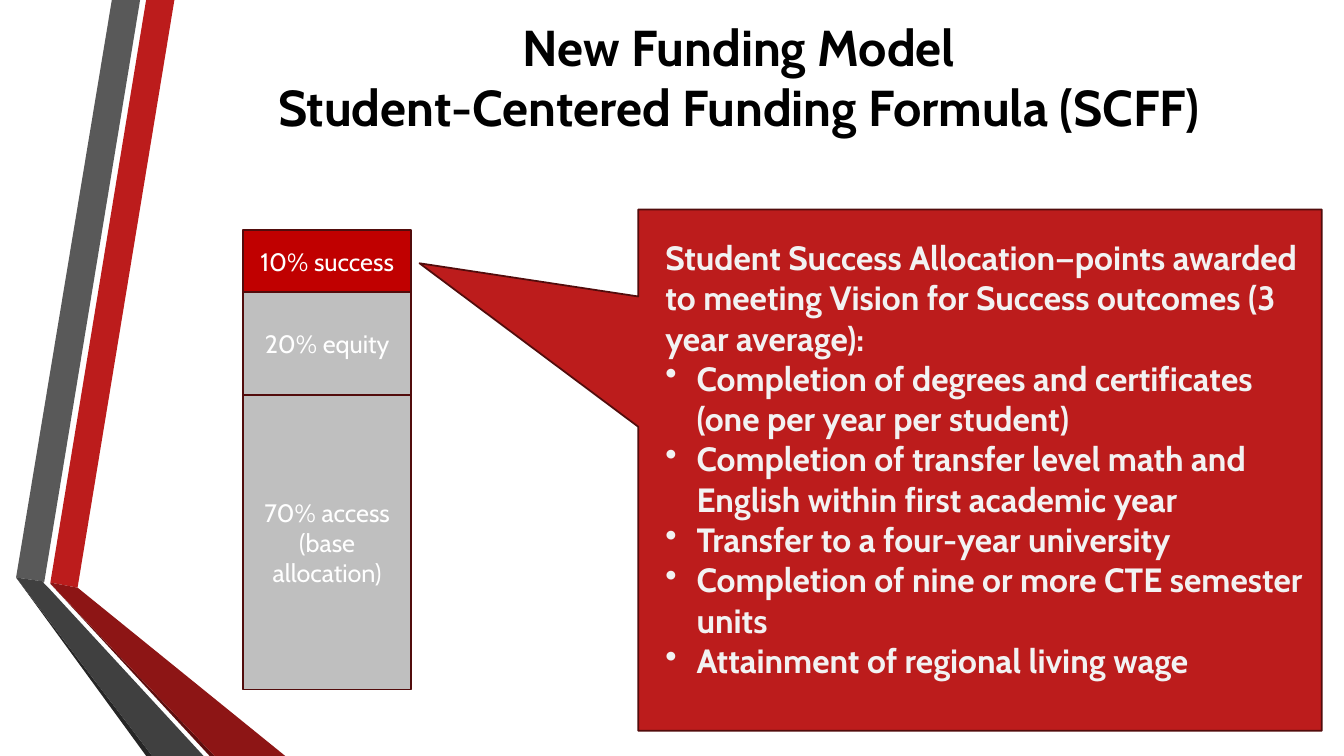
from dataclasses import dataclass

from lxml import etree
from pptx import Presentation
from pptx.dml.color import RGBColor as RGB
from pptx.enum.shapes import MSO_SHAPE as Preset
from pptx.enum.text import MSO_ANCHOR as Anchor, MSO_AUTO_SIZE as Fit, PP_ALIGN as Align
from pptx.oxml.ns import qn
from pptx.util import Inches, Pt


@dataclass(frozen=True)
class Theme:
    face: str = "Cabin"
    black: str = "000000"
    white: str = "FFFFFF"
    pale: str = "F2F2F2"
    red: str = "BC1C1C"
    edge: str = "520C0C"
    success: str = "C00000"
    base: str = "BFBFBF"
    title: int = 36
    body: int = 24
    label: int = 18


theme = Theme()


def paint(shape, fill, line=None):
    shape.shadow.inherit = False
    shape.fill.solid()
    shape.fill.fore_color.rgb = RGB.from_string(fill)
    if line:
        shape.line.color.rgb = RGB.from_string(line)
        shape.line.width = Pt(1.25)
    else:
        shape.line.fill.background()


def style(para, size, color, bold, align):
    para.alignment = align
    font = para.font
    font.name, font.size, font.bold = theme.face, Pt(size), bold
    font.color.rgb = RGB.from_string(color)


deck = Presentation()
deck.slide_width, deck.slide_height = Inches(13.33), Inches(7.5)
slide = deck.slides.add_slide(deck.slide_layouts[5])
shapes = slide.shapes

# Folded ribbons on the left
ribbons = [
    (theme.red, [(0.5, 5.78), (0.77, 5.83), (1.73, 0), (1.45, 0)]),
    ("595959", [(1.39, 0), (1.11, 0), (0.16, 5.73), (0.44, 5.77)]),
    ("262626", [(0.16, 5.73), (1.45, 7.5), (1.51, 7.5)]),
    ("5E0E0E", [(0.5, 5.79), (2.08, 7.5), (2.13, 7.5)]),
    ("8D1515", [(0.5, 5.79), (2.13, 7.5), (2.83, 7.5), (0.77, 5.83), (0.5, 5.78)]),
    ("404040", [(2.02, 7.5), (0.48, 5.83), (0.43, 5.78), (0.44, 5.77),
                (0.16, 5.73), (1.51, 7.5)]),
]
for color, points in ribbons:
    start, *rest = [(Inches(x), Inches(y)) for x, y in points]
    pen = shapes.build_freeform(*start)
    pen.add_line_segments(rest, close=True)
    paint(pen.convert_to_shape(), color)

# Callout behind the success list
callout = shapes.add_shape(Preset.RECTANGULAR_CALLOUT, Inches(6.33), Inches(2.08),
                           Inches(6.78), Inches(5.17))
callout.adjustments[0], callout.adjustments[1] = -0.82, -0.397
paint(callout, theme.red, theme.edge)

title = shapes.title
title.left, title.top = Inches(2.33), Inches(0.25)
title.width, title.height = Inches(10), Inches(1.02)
frame = title.text_frame
frame.text = "New Funding Model\vStudent-Centered Funding Formula (SCFF)"
frame.auto_size = Fit.NONE
frame.vertical_anchor = Anchor.MIDDLE
style(frame.paragraphs[0], theme.title, theme.black, True, Align.CENTER)

# Stacked funding shares, top to bottom
top = 2.28
for label, height, color in [
    ("10% success", 0.62, theme.success),
    ("20% equity", 1.02, theme.base),
    ("70% access (base allocation)", 2.92, theme.base),
]:
    share = shapes.add_shape(Preset.RECTANGLE, Inches(2.41), Inches(top),
                             Inches(1.67), Inches(height))
    paint(share, color, theme.edge)
    frame = share.text_frame
    frame.text = label
    frame.word_wrap = True
    frame.vertical_anchor = Anchor.MIDDLE
    style(frame.paragraphs[0], theme.label, theme.white, False, Align.CENTER)
    top += height

# Success list
box = shapes.add_textbox(Inches(6.5), Inches(2.3), Inches(6.61), Inches(4.54))
frame = box.text_frame
frame.word_wrap = True
frame.auto_size = Fit.SHAPE_TO_FIT_TEXT
frame.text = "\n".join([
    "Student Success Allocation—points awarded to meeting Vision for Success "
    "outcomes (3 year average):",
    "Completion of degrees and certificates (one per year per student)",
    "Completion of transfer level math and English within first academic year",
    "Transfer to a four-year university",
    "Completion of nine or more CTE semester units",
    "Attainment of regional living wage",
])
for index, para in enumerate(frame.paragraphs):
    style(para, theme.body, theme.pale, True, Align.LEFT)
    if index:
        props = para._p.get_or_add_pPr()
        props.set("marL", str(Inches(0.31)))
        props.set("indent", str(-Inches(0.31)))
        bullet = etree.Element(qn("a:buChar"), char="•")
        props.insert(0, bullet)

deck.save("out.pptx")
